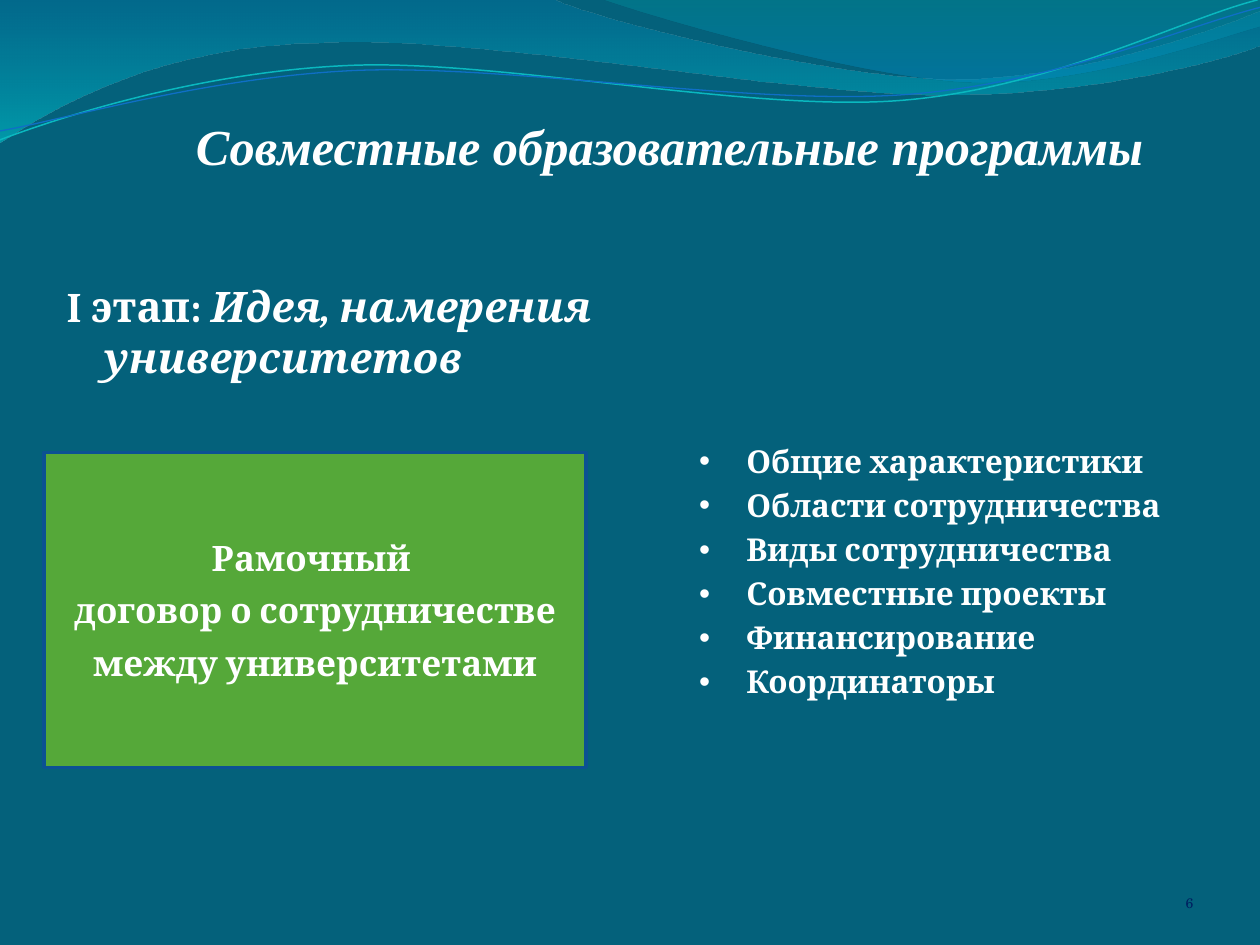
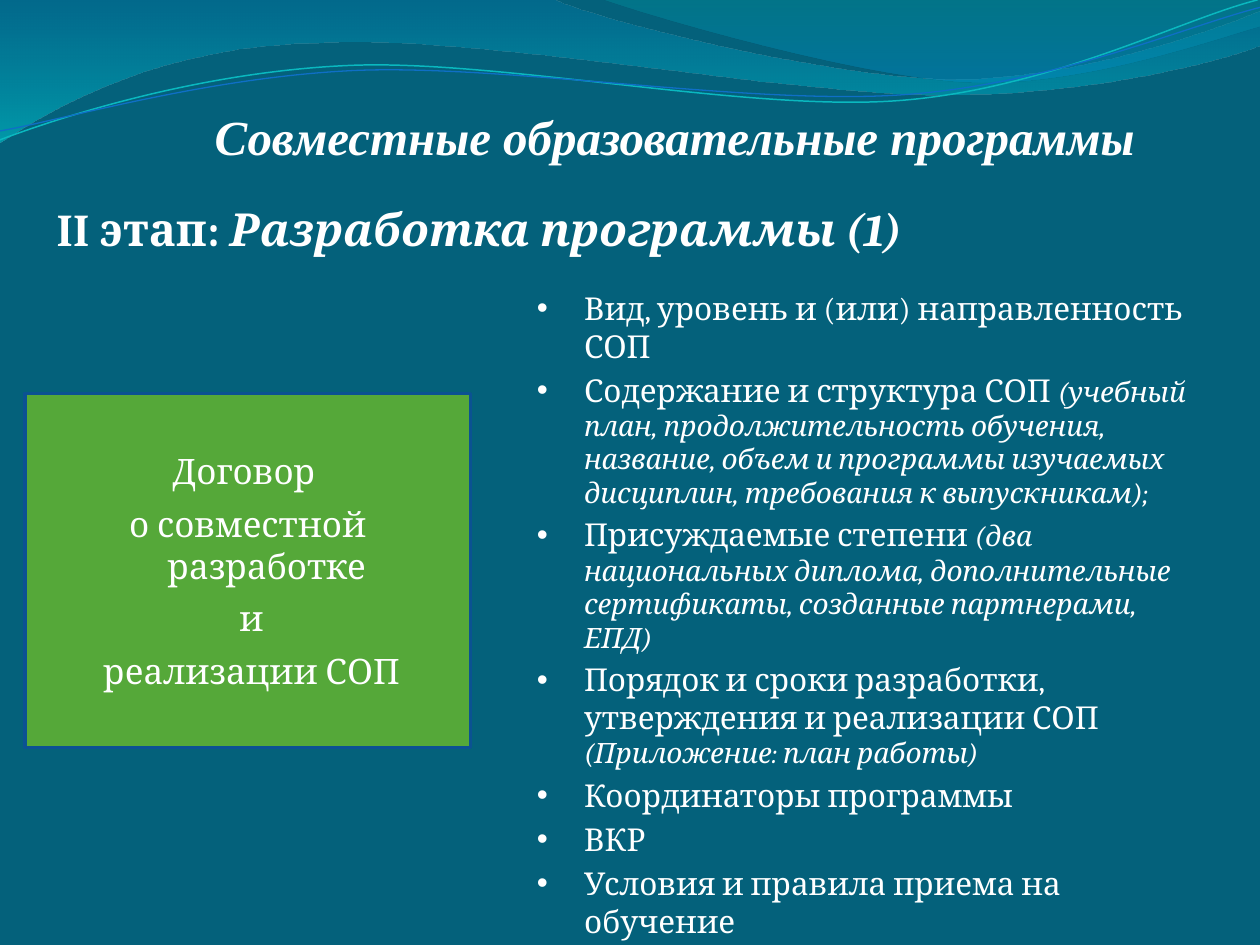
from pptx import Presentation
from pptx import util as u
from pptx.dml.color import RGBColor
from pptx.enum import shapes, text
from pptx.oxml.ns import qn
from lxml import etree

Cm, Pt = u.Cm, u.Pt

TEAL = RGBColor(0x04, 0x61, 0x7B)
GREEN = RGBColor(0x55, 0xA8, 0x39)
BLUE_EDGE = RGBColor(0x0B, 0x52, 0x92)
NAVY = RGBColor(0x00, 0x20, 0x60)
WHITE = RGBColor(0xFF, 0xFF, 0xFF)
BODY_FONT, TITLE_FONT, NUMBER_FONT = "Cambria", "Times New Roman", "TeX Gyre Schola"
TITLE = "Совместные образовательные программы"

# Waves in cm: a start point, then steps of one point (line) or three (curve).
# Gradient stops: position, colour, opacity in percent.
FILLED_WAVES = [
    ([(0, 0), [(11.18, 0)],
      [(12.09, 0.43), (16.87, 1.6), (19.25, 1.6)],
      [(21.67, 1.6), (24.33, 0.66), (25.4, 0.23)], [(25.4, 0.91)],
      [(24.97, 1.12), (22.1, 1.93), (18.95, 1.91)],
      [(15.8, 1.91), (9.7, 0.71), (6.53, 0.86)],
      [(3.25, 0.91), (1.17, 2.11), (0, 2.87)]],
     [(0, RGBColor(0x00, 0x74, 0xA1), 45), (1, RGBColor(0x00, 0xC6, 0xCF), 55)]),
    ([(12.17, 0),
      [(12.93, 0.28), (17.32, 1.57), (19.53, 1.65)],
      [(21.74, 1.75), (24.41, 0.81), (25.4, 0.53)], [(25.4, 0)]],
     [(0, RGBColor(0x00, 0xA1, 0xA9), 30), (0.8, RGBColor(0x00, 0x8B, 0xBF), 45)]),
]
LINE_WAVES = [
    ([(0, 2.82),
      [(1.22, 2.36), (4.01, 1.45), (7.04, 1.32)],
      [(10.03, 1.19), (15.06, 2.26), (18.11, 2.03)],
      [(21.16, 1.8), (23.83, 0.38), (25.35, 0)]],
     RGBColor(0x0A, 0xB8, 0xBF), 0.85),
    ([(0, 2.64),
      [(1.19, 2.44), (4.17, 1.55), (7.19, 1.42)],
      [(10.24, 1.3), (15.16, 2.13), (18.21, 1.91)],
      [(21.23, 1.7), (23.9, 0.53), (25.4, 0.15)]],
     RGBColor(0x0F, 0x6F, 0xC6), 0.75),
]


# Shared helpers
def place(shape, box):
    shape.left, shape.top, shape.width, shape.height = (Cm(side) for side in box)


def paint(shape, fill, edge):
    shape.fill.solid()
    shape.fill.fore_color.rgb = fill
    shape.line.color.rgb, shape.line.width = edge, Pt(2)


def style_font(font, size, name=BODY_FONT, color=WHITE, bold=False, italic=False):
    font.size, font.name = Pt(size), name
    font.bold, font.italic = bold, italic
    font.color.rgb = color


def hang(para, indent, bullet=None):
    props = para._p.get_or_add_pPr()
    props.set("marL", str(Cm(indent)))
    props.set("indent", str(-Cm(indent)))
    if bullet:
        etree.SubElement(props, qn("a:buFont")).set("typeface", "Arial")
        etree.SubElement(props, qn("a:buChar")).set("char", bullet)
    else:
        etree.SubElement(props, qn("a:buNone"))


def fill_paragraphs(frame, count):
    return [frame.paragraphs[0]] + [frame.add_paragraph() for _ in range(count - 1)]


# Background and waves, kept on the layout
def draw_wave(page, outline, closed):
    start, *steps = outline
    builder = page.shapes.build_freeform(Cm(start[0]), Cm(start[1]))
    corners = [(Cm(x), Cm(y)) for step in steps for x, y in step]
    builder.add_line_segments(corners, close=closed)
    wave = builder.convert_to_shape()
    wave.shadow.inherit = False
    # Turn each run of three corners into one Bezier curve
    segments = iter(list(wave.element.iter(qn("a:lnTo"))))
    for step in steps:
        first, *others = [next(segments) for _ in step]
        if others:
            curve = etree.Element(qn("a:cubicBezTo"))
            first.addprevious(curve)
            for segment in (first, *others):
                curve.append(segment[0])
                segment.getparent().remove(segment)
    return wave


def decorate_layout(layout, page):
    layout.background.fill.solid()
    layout.background.fill.fore_color.rgb = TEAL
    waves = []
    for outline, stops in FILLED_WAVES:
        wave = draw_wave(page, outline, True)
        wave.line.fill.background()
        wave.fill.gradient()
        wave.fill.gradient_angle = 270
        for stop, (position, color, _) in zip(wave.fill.gradient_stops, stops):
            stop.position, stop.color.rgb = position, color
        tints = list(wave.element.spPr.iter(qn("a:srgbClr")))
        for tint, (_, _, opacity) in zip(tints, stops):
            etree.SubElement(tint, qn("a:alpha")).set("val", str(opacity * 1000))
        waves.append(wave)
    for outline, color, width in LINE_WAVES:
        wave = draw_wave(page, outline, False)
        wave.fill.background()
        wave.line.color.rgb, wave.line.width = color, Pt(width)
        waves.append(wave)
    for position, wave in enumerate(waves, start=2):
        layout.shapes.element.insert(position, wave.element)


# Regions of a stage slide
def set_title(title, box, size, anchor):
    place(title, box)
    frame = title.text_frame
    frame.auto_size, frame.vertical_anchor = text.MSO_AUTO_SIZE.NONE, anchor
    frame.margin_left = frame.margin_right = frame.margin_bottom = 0
    frame.margin_top = Cm(0.13) if anchor == text.MSO_ANCHOR.BOTTOM else 0
    para = frame.paragraphs[0]
    para.text, para.alignment = TITLE, text.PP_ALIGN.CENTER
    style_font(para.font, size, TITLE_FONT, bold=True, italic=True)


def set_heading(heading, box, size, stage, topic):
    place(heading, box)
    frame = heading.text_frame
    frame.auto_size = text.MSO_AUTO_SIZE.NONE
    para = frame.paragraphs[0]
    para.space_before = Pt(0)
    hang(para, 0.76)
    for words, italic in ((stage, False), (topic, True)):
        span = para.add_run()
        span.text = words
        style_font(span.font, size, bold=True, italic=italic)


def add_agreement(page, box, lines, bold):
    card = page.shapes.add_shape(shapes.MSO_SHAPE.RECTANGLE, *(Cm(side) for side in box))
    card.shadow.inherit = False
    paint(card, GREEN, BLUE_EDGE)
    frame = card.text_frame
    frame.word_wrap, frame.vertical_anchor = True, text.MSO_ANCHOR.MIDDLE
    for para, line in zip(fill_paragraphs(frame, len(lines)), lines):
        para.text, para.alignment = line, text.PP_ALIGN.CENTER
        para.space_before = Pt(6)
        hang(para, 0.76)
        style_font(para.font, 20, bold=bold)


def set_topics(topics, box, inset, items, bold):
    """Each item is a topic, or a topic with a smaller italic remark."""
    place(topics, box)
    paint(topics, TEAL, TEAL)
    frame = topics.text_frame
    frame.auto_size, frame.vertical_anchor = text.MSO_AUTO_SIZE.NONE, text.MSO_ANCHOR.TOP
    frame.margin_top, frame.margin_bottom = Cm(inset), 0
    for para, (topic, *remarks) in zip(fill_paragraphs(frame, len(items)), items):
        para.space_before = Pt(3.6)
        hang(para, 0.95, "•")
        style_font(para.font, 18, bold=bold)
        para.add_run().text = topic
        for remark in remarks:
            span = para.add_run()
            span.text = remark
            span.font.size, span.font.italic = Pt(16), True


def add_page_number(page, box, number):
    label = page.shapes.add_textbox(*(Cm(side) for side in box))
    frame = label.text_frame
    frame.word_wrap, frame.vertical_anchor = True, text.MSO_ANCHOR.BOTTOM
    frame.margin_left = frame.margin_right = frame.margin_top = frame.margin_bottom = 0
    para = frame.paragraphs[0]
    para.text, para.alignment = number, text.PP_ALIGN.RIGHT
    style_font(para.font, 8, NUMBER_FONT, NAVY)


# Slides
def fill_idea_stage(page):
    title, heading, topics = page.placeholders
    set_title(title, (3.3, 1.73, 20.4, 2.41), 28.8, text.MSO_ANCHOR.MIDDLE)
    set_heading(heading, (1.09, 5.53, 18.26, 1.4), 24,
                "I этап: ", "Идея, намерения университетов")
    add_agreement(page, (0.89, 9.12, 10.92, 6.35),
                  ["Рамочный ", "договор о сотрудничестве", " между университетами "], True)
    set_topics(topics, (13.84, 7.92, 11.02, 7.92), 0.99, [
        ("Общие характеристики",),
        ("Области сотрудничества",),
        ("Виды сотрудничества",),
        ("Совместные проекты",),
        ("Финансирование",),
        ("Координаторы",),
    ], True)
    add_page_number(page, (23.02, 17.66, 1.04, 0.71), "6")


def fill_design_stage(page):
    title, heading, topics = page.placeholders
    set_title(title, (3.1, 1.32, 21, 2.01), 28, text.MSO_ANCHOR.BOTTOM)
    set_heading(heading, (0.89, 3.92, 18.26, 1.4), 26,
                "II этап: ", "Разработка программы (1)")
    add_agreement(page, (0.5, 7.93, 8.99, 7.14),
                  ["Договор ", "о совместной разработке", " и", " реализации СОП"], False)
    set_topics(topics, (10.57, 5.82, 13.92, 12.9), 0, [
        ("Вид, уровень и (или) направленность СОП",),
        ("Содержание и структура СОП ",
         "(учебный план, продолжительность обучения, название, объем и программы "
         "изучаемых дисциплин, требования к выпускникам);"),
        ("Присуждаемые степени ",
         "(два национальных диплома, дополнительные сертификаты, "
         "созданные партнерами, ЕПД)"),
        ("Порядок и сроки разработки, утверждения и реализации СОП ",
         "(Приложение: план работы)"),
        ("Координаторы программы",),
        ("ВКР",),
        ("Условия и правила приема на обучение",),
    ], False)


def main():
    deck = Presentation()
    deck.slide_width, deck.slide_height = Cm(25.4), Cm(19.05)
    layout = deck.slide_layouts.get_by_name("Two Content")
    idea_page, design_page = (deck.slides.add_slide(layout) for _ in range(2))
    decorate_layout(layout, idea_page)
    fill_idea_stage(idea_page)
    fill_design_stage(design_page)
    deck.save("out.pptx")


if __name__ == "__main__":
    main()
